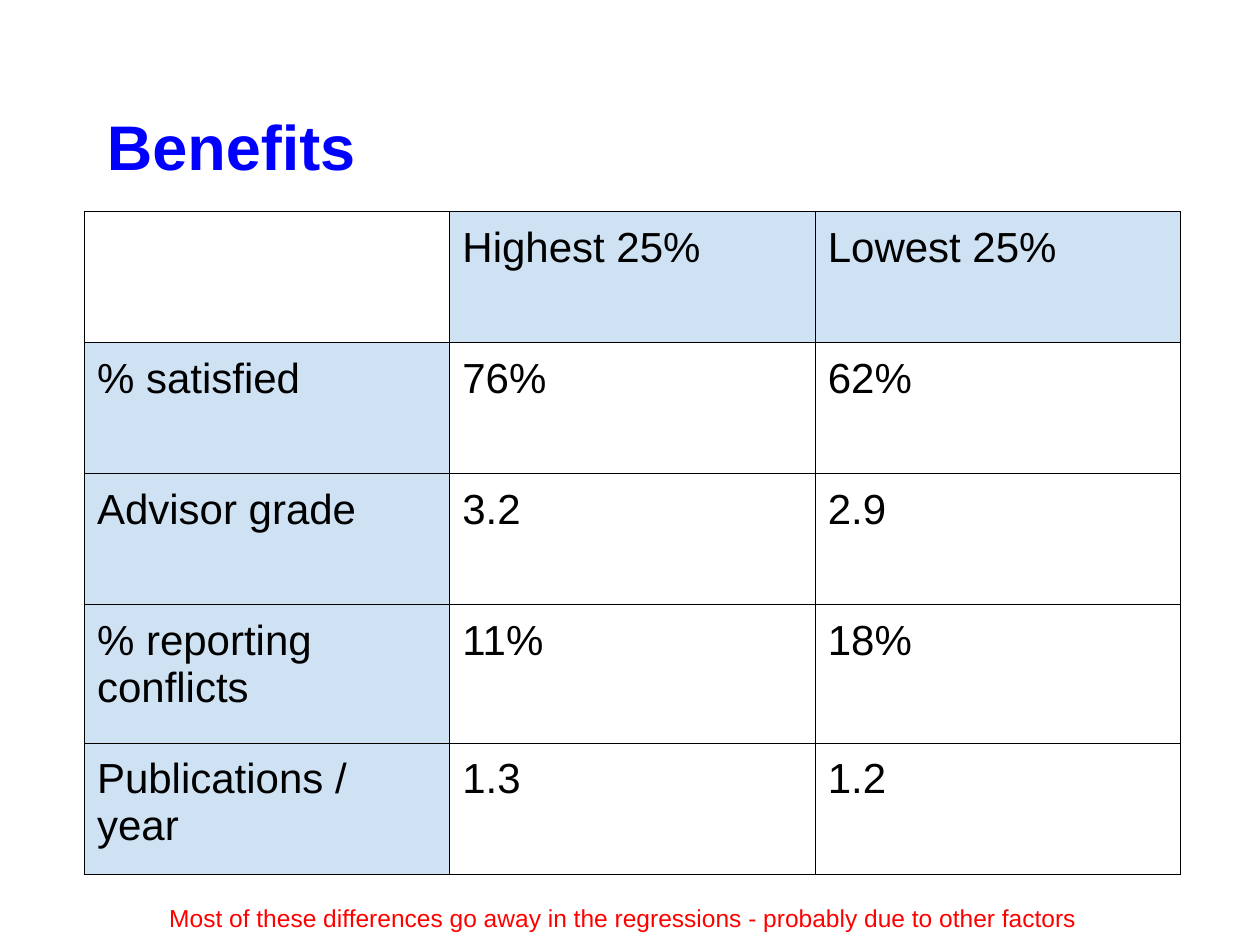
import pptx
import pptx.util
import pptx.dml.color
import pptx.enum.text
import pptx.oxml.ns
from lxml import etree

Inches = pptx.util.Inches
Pt = pptx.util.Pt
RGBColor = pptx.dml.color.RGBColor
Align = pptx.enum.text.PP_ALIGN
Anchor = pptx.enum.text.MSO_ANCHOR
qn = pptx.oxml.ns.qn

BLACK = RGBColor(0, 0, 0)
WHITE = RGBColor(255, 255, 255)
BLUE = RGBColor(0, 0, 255)
RED = RGBColor(255, 0, 0)
PALE = RGBColor(0xCF, 0xE2, 0xF3)

ROWS = [
    ["", "Highest 25%", "Lowest 25%"],
    ["% satisfied", "76%", "62%"],
    ["Advisor grade", "3.2", "2.9"],
    ["% reporting conflicts", "11%", "18%"],
    ["Publications / year", "1.3", "1.2"],
]
TALL = [1.04, 1.04, 1.04, 1.1, 1.04]


class Deck:
    font = "Arial"
    inset = Inches(0.1)

    def __init__(self, slide):
        self.slide = slide

    def pad(self, item):
        item.margin_left = item.margin_right = self.inset
        item.margin_top = item.margin_bottom = self.inset

    def label(self, para, text, size, color, bold=False):
        run = para.add_run()
        run.text = text
        run.font.name = self.font
        run.font.size = Pt(size)
        run.font.bold = bold
        run.font.color.rgb = color

    def text(self, box, text, size, color, bold=False, align=Align.LEFT,
             anchor=Anchor.TOP, indent=0):
        frame = self.slide.shapes.add_textbox(*map(Inches, box)).text_frame
        frame.word_wrap = True
        frame.vertical_anchor = anchor
        self.pad(frame)
        para = frame.paragraphs[0]
        para.alignment = align
        if indent:
            para._p.get_or_add_pPr().set("indent", str(Inches(indent)))
        self.label(para, text, size, color, bold)

    def border(self, cell):
        props = cell._tc.get_or_add_tcPr()
        for side in ("lnL", "lnR", "lnT", "lnB"):
            line = etree.SubElement(props, qn("a:" + side), w=str(Pt(0.75)))
            fill = etree.SubElement(line, qn("a:solidFill"))
            etree.SubElement(fill, qn("a:srgbClr"), val=str(BLACK))

    def table(self, left, top, width, rows, tall):
        count = len(rows[0])
        frame = self.slide.shapes.add_table(
            len(rows), count, Inches(left), Inches(top),
            Inches(width * count), Inches(sum(tall)))
        grid = frame.table
        grid.first_row = grid.horz_banding = False
        for col in grid.columns:
            col.width = Inches(width)
        for r, (row, high) in enumerate(zip(rows, tall)):
            grid.rows[r].height = Inches(high)
            for c, text in enumerate(row):
                cell = grid.cell(r, c)
                self.pad(cell)
                self.border(cell)
                head = (r == 0) != (c == 0)
                cell.fill.solid()
                cell.fill.fore_color.rgb = PALE if head else WHITE
                if text:
                    para = cell.text_frame.paragraphs[0]
                    self.label(para, text, 24, BLACK)


def main():
    show = pptx.Presentation()
    show.slide_width = Inches(10)
    show.slide_height = Inches(7.5)
    deck = Deck(show.slides.add_slide(show.slide_layouts[6]))
    deck.text((0.5, 0.3, 9, 1.25), "Benefits", 36, BLUE, bold=True,
              anchor=Anchor.BOTTOM, indent=0.25)
    deck.table(0.67, 1.68, 2.9, ROWS, TALL)
    deck.text((0.3, 7.07, 9.29, 0.37),
              "Most of these differences go away in the regressions"
              " - probably due to other factors",
              14, RED, align=Align.CENTER)
    show.save("out.pptx")


if __name__ == "__main__":
    main()
